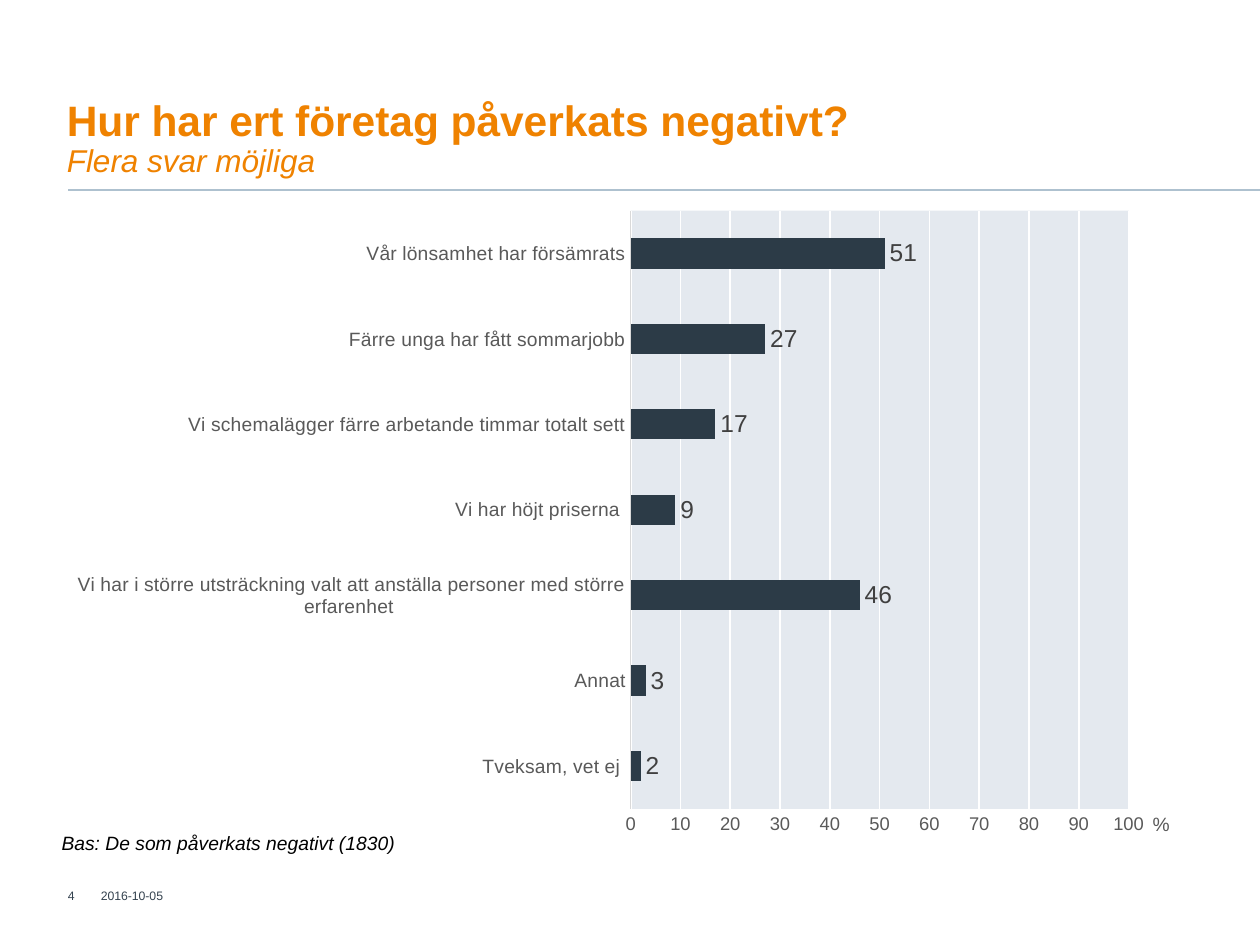
from lxml import etree
from pptx import Presentation
from pptx import util as u
from pptx.chart.data import CategoryChartData
from pptx.dml.color import RGBColor
from pptx.enum import chart as charts, shapes, text
from pptx.oxml import parse_xml
from pptx.oxml.ns import nsdecls, qn

ORANGE = RGBColor(0xEF, 0x82, 0x00)
RULE = RGBColor(0xAE, 0xC1, 0xCF)
BAR = RGBColor(0x2C, 0x3B, 0x47)
FOOTER = RGBColor(0x33, 0x41, 0x4E)
LABEL = RGBColor(0x59, 0x59, 0x59)
VALUE = RGBColor(0x40, 0x40, 0x40)
AXIS = RGBColor(0xD9, 0xD9, 0xD9)
WHITE = RGBColor(0xFF, 0xFF, 0xFF)
BLACK = RGBColor(0, 0, 0)
PLOT_FILL = "E4E9EF"

ANSWERS = [
    ("Tveksam, vet ej ", 2),
    ("Annat", 3),
    ("Vi har i större utsträckning valt att anställa personer med större erfarenhet ", 46),
    ("Vi har höjt priserna ", 9),
    ("Vi schemalägger färre arbetande timmar totalt sett", 17),
    ("Färre unga har fått sommarjobb", 27),
    ("Vår lönsamhet har försämrats", 51),
]


def style(font, size, color, bold=False, italic=False):
    font.name = "Arial"
    font.size = u.Pt(size)
    font.color.rgb = color
    font.bold = bold
    font.italic = italic


def add_text(page, place, words, size, color, italic=False, wrap=True,
             insets=(7.2, 3.6, 7.2, 3.6), anchor=text.MSO_ANCHOR.TOP):
    box = page.shapes.add_textbox(*map(u.Pt, place))
    frame = box.text_frame
    frame.word_wrap = wrap
    frame.vertical_anchor = anchor
    (frame.margin_left, frame.margin_top,
     frame.margin_right, frame.margin_bottom) = map(u.Pt, insets)
    frame.text = words
    para = frame.paragraphs[0]
    for span in para.runs:
        style(span.font, size, color, italic=italic)
    return para


def add_title(page, heading, subheading):
    para = add_text(page, (38.2, 67.7, 560, 64.8), "", 18, ORANGE,
                    insets=(0, 0, 7.2, 30), anchor=text.MSO_ANCHOR.BOTTOM)
    para.text = f"{heading}\v{subheading}"
    para.line_spacing = 0.9
    first, second = para.runs
    style(first.font, 24.3, ORANGE, bold=True)
    style(second.font, 18, ORANGE, italic=True)


def add_rule(page, left, right, top):
    rule = page.shapes.add_connector(
        shapes.MSO_CONNECTOR.STRAIGHT, *map(u.Pt, (left, top, right, top)))
    rule.line.color.rgb = RULE
    rule.line.width = u.Pt(1)
    etree.SubElement(rule._element.spPr, qn("a:effectLst"))


def format_axis(axis, size):
    axis.major_tick_mark = charts.XL_TICK_MARK.NONE
    axis.minor_tick_mark = charts.XL_TICK_MARK.NONE
    style(axis.tick_labels.font, size, LABEL)


def format_plot_area(chart):
    area = chart._chartSpace.chart.plotArea
    for old in area.findall(qn("c:layout")):
        area.remove(old)
    sides = {"x": 0.52, "y": 0.02, "w": 0.45, "h": 0.92}
    sizes = "".join(f'<c:{side} val="{value}"/>' for side, value in sides.items())
    area.insert(0, parse_xml(
        f'<c:layout {nsdecls("c")}><c:manualLayout><c:layoutTarget val="inner"/>'
        f'<c:xMode val="edge"/><c:yMode val="edge"/>{sizes}'
        '</c:manualLayout></c:layout>'))
    area.append(parse_xml(
        f'<c:spPr {nsdecls("c", "a")}><a:solidFill><a:srgbClr val="{PLOT_FILL}"/>'
        '</a:solidFill><a:ln><a:noFill/></a:ln></c:spPr>'))


def add_bar_chart(page, place, answers):
    data = CategoryChartData()
    data.categories = [answer for answer, share in answers]
    data.add_series("Series 1", [share for answer, share in answers])
    chart = page.shapes.add_chart(
        charts.XL_CHART_TYPE.BAR_CLUSTERED, *map(u.Pt, place), data).chart
    chart.has_legend = False
    chart.has_title = False
    style(chart.font, 10, BLACK)

    format_axis(chart.category_axis, 11)
    chart.category_axis.format.line.color.rgb = AXIS
    chart.category_axis.format.line.width = u.Pt(0.75)

    values = chart.value_axis
    format_axis(values, 10.5)
    values.minimum_scale, values.maximum_scale, values.major_unit = 0, 100, 10
    values.format.line.fill.background()
    values.has_major_gridlines = True
    values.major_gridlines.format.line.color.rgb = WHITE
    values.major_gridlines.format.line.width = u.Pt(1)

    plot = chart.plots[0]
    plot.gap_width = 182
    plot.vary_by_categories = False
    bars = plot.series[0]
    bars.format.fill.solid()
    bars.format.fill.fore_color.rgb = BAR
    labels = bars.data_labels
    labels.show_value = True
    labels.position = charts.XL_LABEL_POSITION.OUTSIDE_END
    style(labels.font, 14, VALUE)
    format_plot_area(chart)


def main():
    deck = Presentation()
    deck.slide_width, deck.slide_height = u.Pt(720), u.Pt(540)
    page = deck.slides.add_slide(deck.slide_layouts[6])
    add_rule(page, 39, 720, 108.7)
    add_bar_chart(page, (31.7, 113, 632.2, 371.5), ANSWERS)
    add_text(page, (57.6, 505.5, 43.2, 12.2), "2016-10-05", 7, FOOTER,
             insets=(0, 3.6, 0, 3.6), anchor=text.MSO_ANCHOR.MIDDLE)
    add_text(page, (31.7, 505.5, 24.5, 12.2), "4", 7, FOOTER,
             anchor=text.MSO_ANCHOR.MIDDLE)
    add_text(page, (651.6, 460.8, 24.5, 20.9), "%", 11, LABEL, wrap=False)
    add_title(page, "Hur har ert företag påverkats negativt?", "Flera svar möjliga")
    add_text(page, (28.1, 471.6, 211.7, 20.9),
             "Bas: De som påverkats negativt (1830)", 11, BLACK, italic=True)
    deck.save("out.pptx")


if __name__ == "__main__":
    main()
